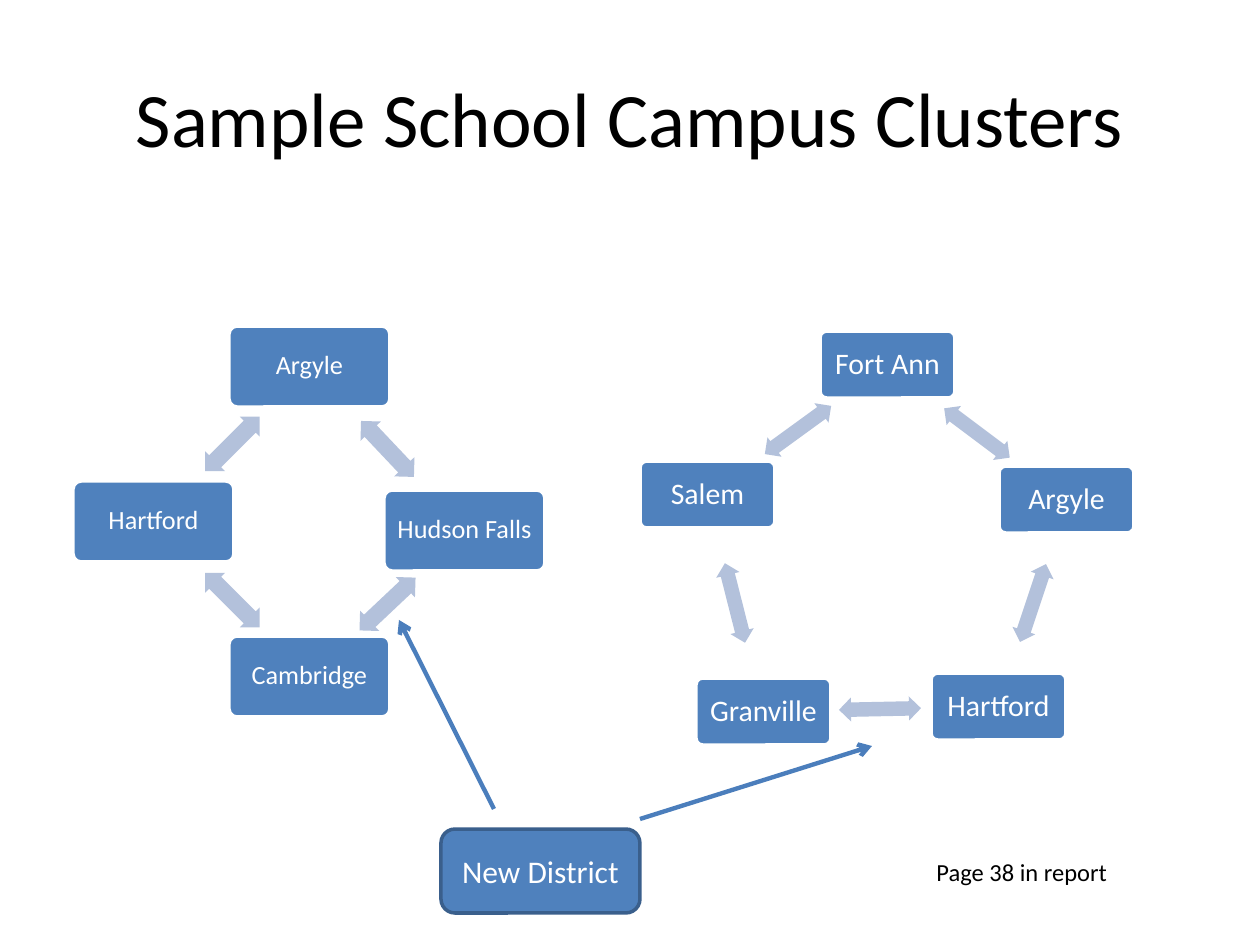
from lxml import etree
from pptx import Presentation
from pptx.dml.color import RGBColor
from pptx.enum.shapes import MSO_CONNECTOR, MSO_SHAPE
from pptx.enum.text import MSO_ANCHOR, PP_ALIGN
from pptx.oxml.ns import qn
from pptx.util import Pt

ROUND_BOX = MSO_SHAPE.ROUNDED_RECTANGLE
DOUBLE_ARROW = MSO_SHAPE.LEFT_RIGHT_ARROW
CENTER, MIDDLE = PP_ALIGN.CENTER, MSO_ANCHOR.MIDDLE
STRAIGHT = MSO_CONNECTOR.STRAIGHT
PX = 914400 / 126
BLUE, PALE, WHITE, BLACK = "4F81BD", "B3C1DB", "FFFFFF", "000000"


def emu(*lengths):
    return [round(length * PX) for length in lengths]


def write(frame, text, size, color, align=None):
    frame.word_wrap = True
    frame.text = text
    para = frame.paragraphs[0]
    para.alignment = align
    font = para.runs[0].font
    font.name, font.size = "Calibri", Pt(size)
    font.color.rgb = RGBColor.from_string(color)


deck = Presentation()
deck.slide_width, deck.slide_height = emu(1260, 945)
page = deck.slides.add_slide(deck.slide_layouts[5])

# Title
title = page.shapes.title
title.left, title.top, title.width, title.height = emu(63, 38, 1134, 157)
title.text_frame.vertical_anchor = MIDDLE
write(title.text_frame, "Sample School Campus Clusters", 44, BLACK, CENTER)

# Two clusters: schools as (name, left, top), arrows as (left, top, angle)
clusters = [
    {
        "box": (161, 81), "arrow": (77, 28), "inset": 8, "size": 15,
        "schools": [("Argyle", 229, 326), ("Hudson Falls", 384, 490),
                    ("Cambridge", 229, 636), ("Hartford", 73, 481)],
        "arrows": [(349, 435, 46.6), (349, 590, 136.7),
                   (194, 586, 225), (194, 430, 315)],
    },
    {
        "box": (135, 67), "arrow": (82, 24), "inset": 9, "size": 17,
        "schools": [("Fort Ann", 820, 331), ("Argyle", 999, 466),
                    ("Hartford", 931, 673), ("Granville", 696, 678),
                    ("Salem", 640, 461)],
        "arrows": [(936, 421, 36.9), (992, 591, 108.4), (839, 697, 178.8),
                   (694, 591, 255.8), (757, 418, 324)],
    },
]
for cluster in clusters:
    for name, left, top in cluster["schools"]:
        box = page.shapes.add_shape(ROUND_BOX, *emu(left, top, *cluster["box"]))
        box.shadow.inherit = False
        box.adjustments[0] = 0.1
        box.fill.solid()
        box.fill.fore_color.rgb = RGBColor.from_string(BLUE)
        box.line.color.rgb = RGBColor.from_string(WHITE)
        box.line.width = Pt(2)
        frame = box.text_frame
        frame.margin_left, frame.margin_right, frame.margin_top, frame.margin_bottom = (
            emu(cluster["inset"]) * 4)
        frame.vertical_anchor = MIDDLE
        write(frame, name, cluster["size"], WHITE, CENTER)
        frame.paragraphs[0].line_spacing = 0.9
    for left, top, angle in cluster["arrows"]:
        arrow = page.shapes.add_shape(DOUBLE_ARROW, *emu(left, top, *cluster["arrow"]))
        arrow.shadow.inherit = False
        arrow.adjustments[0], arrow.adjustments[1] = 0.6, 0.5
        arrow.rotation = angle
        arrow.fill.solid()
        arrow.fill.fore_color.rgb = RGBColor.from_string(PALE)
        arrow.line.fill.background()

# New district
district = page.shapes.add_shape(ROUND_BOX, *emu(441, 829, 199, 84))
district.shadow.inherit = False
district.fill.solid()
district.fill.fore_color.rgb = RGBColor.from_string(BLUE)
district.line.color.rgb = RGBColor.from_string("3A5F8C")
district.line.width = Pt(2)
district.text_frame.vertical_anchor = MIDDLE
write(district.text_frame, "New District", 18, WHITE, CENTER)

# Pointers from the new district to the clusters
for ends in [(494, 809, 399, 620), (640, 819, 872, 746)]:
    pointer = page.shapes.add_connector(STRAIGHT, *emu(*ends))
    pointer.line.color.rgb = RGBColor.from_string("4B7EBC")
    pointer.line.width = Pt(2.5)
    etree.SubElement(pointer.line._get_or_add_ln(), qn("a:tailEnd"), type="arrow")
    etree.SubElement(pointer._element.spPr, qn("a:effectLst"))

# Report reference
note = page.shapes.add_textbox(*emu(924, 851, 273, 43))
write(note.text_frame, "Page 38 in report", 14, BLACK)

deck.save("out.pptx")
